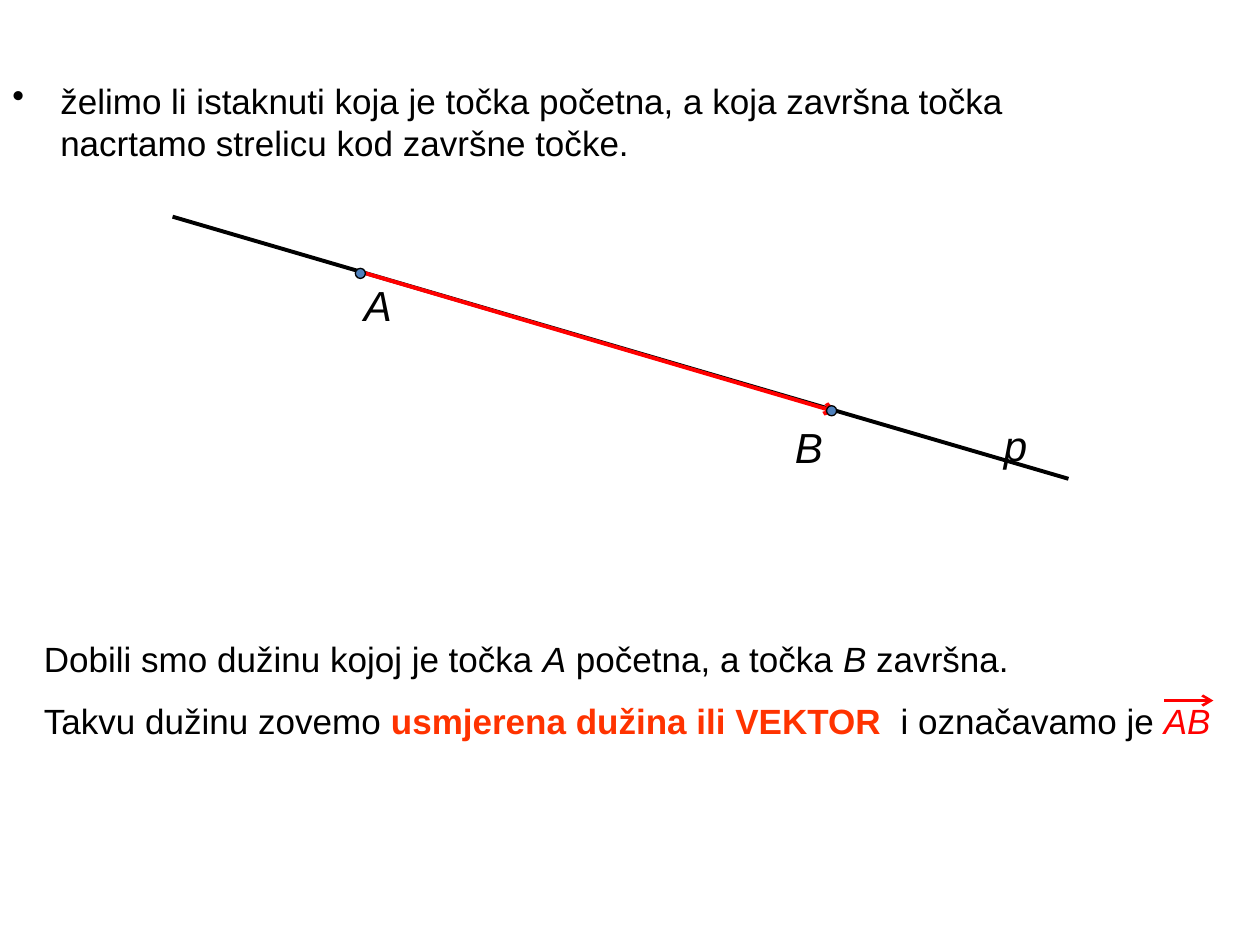
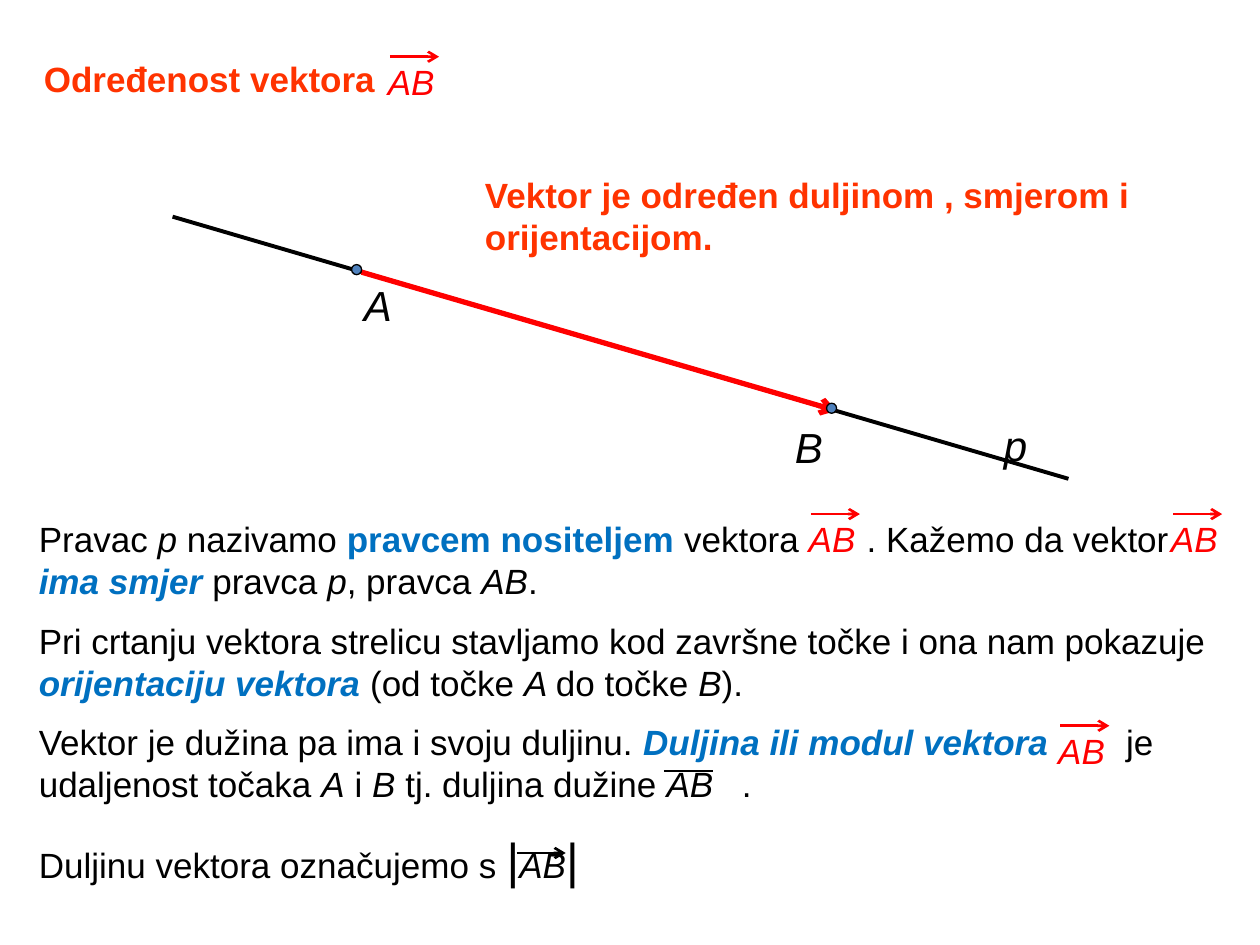
from dataclasses import dataclass

from lxml import etree
from pptx import Presentation
from pptx.dml.color import RGBColor
from pptx.enum.shapes import MSO_CONNECTOR, MSO_SHAPE
from pptx.oxml.ns import qn
from pptx.util import Inches, Pt

STRAIGHT = MSO_CONNECTOR.STRAIGHT
OVAL = MSO_SHAPE.OVAL


@dataclass(frozen=True)
class Theme:
    font: str = "Arial"
    ink: str = "000000"
    vector: str = "FF0000"
    accent: str = "FF3300"
    term: str = "0070C0"
    point: str = "4F81BD"
    body: int = 20
    label: int = 24
    bar: int = 28
    gap: int = 10
    thin: float = 0.75
    mark: float = 1.5
    line: float = 2.25


THEME = Theme()

# Run styles: colour, size, bold, italic
PLAIN = (THEME.ink, THEME.body, False, False)
ITALIC = (THEME.ink, THEME.body, False, True)
LABEL = (THEME.ink, THEME.label, False, True)
BAR = (THEME.ink, THEME.bar, False, False)
ACCENT = (THEME.accent, THEME.body, True, False)
TERM = (THEME.term, THEME.body, True, False)
TERM_ITALIC = (THEME.term, THEME.body, True, True)
VECTOR = (THEME.vector, THEME.body, False, True)

prs = Presentation()
prs.slide_width, prs.slide_height = Inches(10), Inches(7.5)

# The slide is a grid of 100 columns by 75 rows
COL = prs.slide_width / 100
ROW = prs.slide_height / 75
DOT = 0.8
MARK_LENGTH = 3.9


def add_text(slide, left, top, width, height, paragraphs, tabs=(), wrap=True, bullet=False):
    """Place paragraphs, each a list of (text, style) runs; tabs holds columns per paragraph."""
    box = slide.shapes.add_textbox(
        round(left * COL), round(top * ROW), round(width * COL), round(height * ROW))
    frame = box.text_frame
    frame.word_wrap = wrap
    for index, runs in enumerate(paragraphs):
        paragraph = frame.paragraphs[0] if index == 0 else frame.add_paragraph()
        properties = paragraph._p.get_or_add_pPr()
        if bullet:
            indent = round(3.8 * COL)
            properties.set("marL", str(indent))
            properties.set("indent", str(-indent))
            etree.SubElement(properties, qn("a:buChar")).set("char", "•")
        if index < len(tabs) and tabs[index]:
            stops = etree.SubElement(properties, qn("a:tabLst"))
            for column in tabs[index]:
                stop = etree.SubElement(stops, qn("a:tab"))
                stop.set("pos", str(round(column * COL)))
                stop.set("algn", "l")
        if index:
            paragraph.space_before = Pt(max(style[1] for _, style in runs) / 2)
        for text, (colour, size, bold, italic) in runs:
            run = paragraph.add_run()
            run.text = text
            run.font.name = THEME.font
            run.font.size = Pt(size)
            run.font.bold = bold
            run.font.italic = italic
            run.font.color.rgb = RGBColor.from_string(colour)


def add_line(slide, start, end, colour, weight, arrow=False):
    (x1, y1), (x2, y2) = start, end
    line = slide.shapes.add_connector(
        STRAIGHT, round(x1 * COL), round(y1 * ROW), round(x2 * COL), round(y2 * ROW))
    line.line.color.rgb = RGBColor.from_string(colour)
    line.line.width = Pt(weight)
    if arrow:
        etree.SubElement(line.line._get_or_add_ln(), qn("a:tailEnd")).set("type", "arrow")
    etree.SubElement(line._element.spPr, qn("a:effectLst"))


# Both slides: line p with the directed segment from A to B
slides = []
for vector_end, vector_weight, points in (
    ((66.4, 32.7), THEME.line, ((28.2, 21.3), (65.6, 32.2))),
    ((66.4, 32.6), 3, ((27.9, 21), (65.6, 32))),
):
    slide = prs.slides.add_slide(prs.slide_layouts[6])
    slides.append(slide)
    for name, left, top, width in (("A", 27.9, 21.7, 5.3), ("B", 62.1, 33, 6), ("p", 78.7, 32.8, 2.6)):
        add_text(slide, left, top, width, 5, [[(name, LABEL)]])
    add_line(slide, (13.7, 17.2), (84.8, 38), THEME.ink, THEME.line)
    add_line(slide, (28.7, 21.6), vector_end, THEME.vector, vector_weight, arrow=True)
    for left, top in points:
        point = slide.shapes.add_shape(
            OVAL, round(left * COL), round(top * ROW), round(DOT * COL), round(DOT * ROW))
        point.shadow.inherit = False
        point.fill.solid()
        point.fill.fore_color.rgb = RGBColor.from_string(THEME.point)
        point.line.color.rgb = RGBColor.from_string(THEME.ink)
        point.line.width = Pt(THEME.thin)

naming, defining = slides

# Slide 1: the directed segment gets its name
add_text(naming, 0, 5.8, 89.2, 8.5, [[
    ("želimo li istaknuti koja je točka početna, a koja završna točka "
     "nacrtamo strelicu kod završne točke.", PLAIN),
]], bullet=True)
add_text(naming, 2.5, 50.1, 95.7, 4.4, [[
    ("Dobili smo dužinu kojoj je točka ", PLAIN), ("A", ITALIC),
    (" početna, a točka ", PLAIN), ("B", ITALIC), (" završna.", PLAIN),
]])
add_text(naming, 2.5, 55, 97.5, 4.4, [[
    ("Takvu dužinu zovemo ", PLAIN), ("usmjerena dužina ili VEKTOR\t", ACCENT),
    ("i označavamo je ", PLAIN), ("AB", VECTOR),
]], tabs=[[68]])
add_line(naming, (92.4, 55.6), (92.4 + MARK_LENGTH, 55.6), THEME.vector, THEME.mark, arrow=True)

# Slide 2: what determines a vector
add_text(defining, 2.5, 4.1, 35, 4.4, [[("Određenost vektora", ACCENT)]])
add_text(defining, 37.5, 13.3, 58.5, 7.7, [[
    ("Vektor je određen duljinom , smjerom i orijentacijom.", ACCENT),
]])
add_text(defining, 2.1, 40.6, 95.7, 31.6, [
    [("Pravac ", PLAIN), ("p ", ITALIC), ("nazivamo ", PLAIN), ("pravcem nositeljem ", TERM),
     ("vektora\t. Kažemo da vektor ", PLAIN), ("ima smjer ", TERM_ITALIC), ("pravca ", PLAIN),
     ("p", ITALIC), (", pravca ", PLAIN), ("AB", ITALIC), (".", PLAIN)],
    [("Pri crtanju vektora strelicu stavljamo kod završne točke i ona nam pokazuje ", PLAIN),
     ("orijentaciju vektora ", TERM_ITALIC), ("(od točke ", PLAIN), ("A ", ITALIC),
     ("do točke ", PLAIN), ("B", ITALIC), (").", PLAIN)],
    [("Vektor je dužina pa ima i svoju duljinu. ", PLAIN),
     ("Duljina ili modul vektora\t", TERM_ITALIC), ("je udaljenost točaka ", PLAIN),
     ("A", ITALIC), (" i ", PLAIN), ("B", ITALIC), (" tj. duljina dužine ", PLAIN),
     ("AB\t", ITALIC), (".", PLAIN)],
    [("Duljinu vektora označujemo s ", PLAIN), ("|", BAR), ("AB", ITALIC), ("|", BAR)],
], tabs=[[65.7], [], [55.8, 86.3]])

for left, top in ((63.2, 40.6), (91.95, 40.6), (29.8, 4.3), (83, 57.4)):
    add_text(defining, left, top, 6.5, 4.4, [[("AB", VECTOR)]], wrap=False)
    mark = left + 1.15
    add_line(defining, (mark, top + 0.2), (mark + MARK_LENGTH, top + 0.2),
             THEME.vector, THEME.mark, arrow=True)

for left, top, arrow in ((52.7, 61.2, False), (41, 67.7, True)):
    add_line(defining, (left, top), (left + MARK_LENGTH, top), THEME.ink, THEME.mark, arrow)

prs.save("out.pptx")
